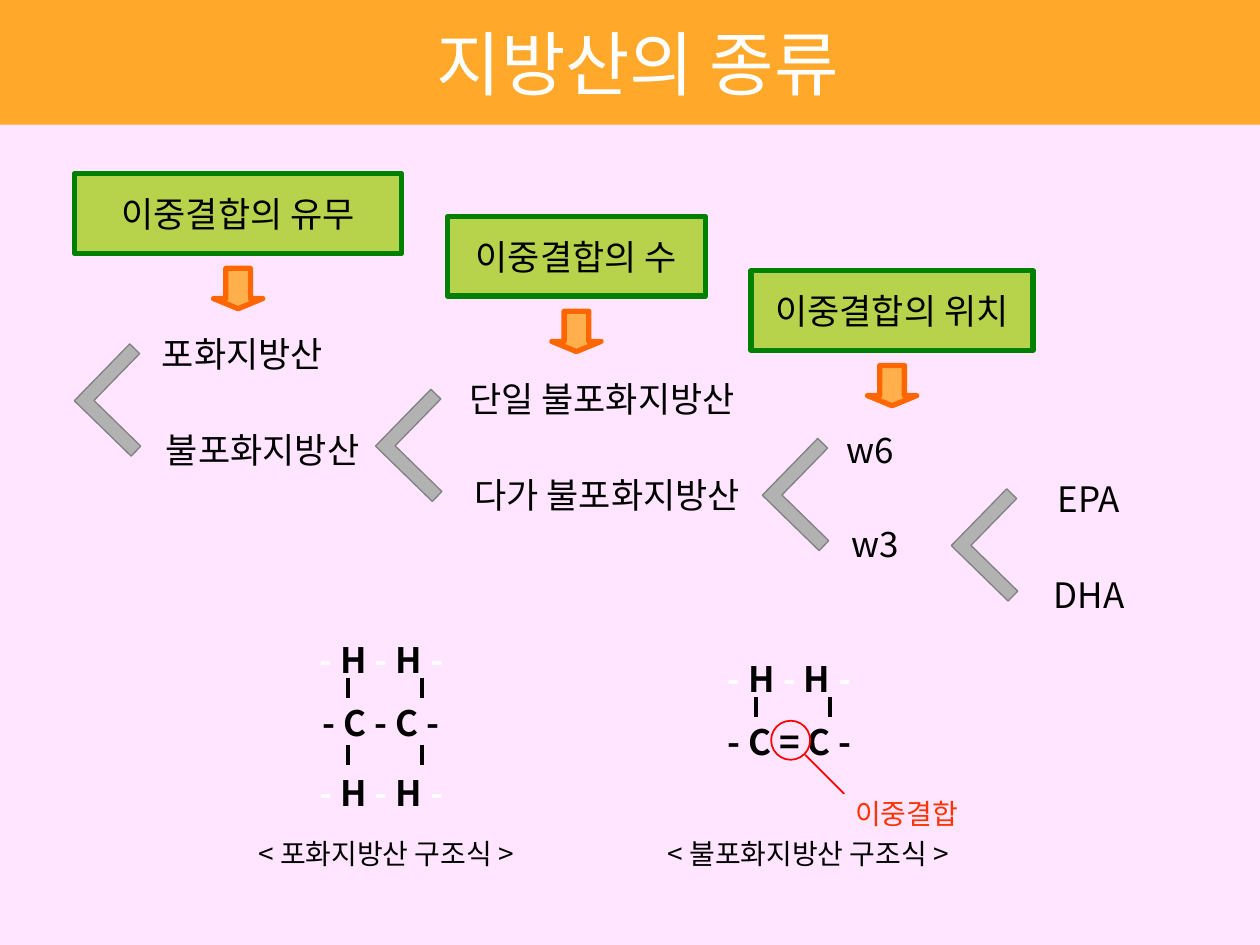
from dataclasses import dataclass

from lxml import etree
from pptx import Presentation
from pptx.dml.color import RGBColor
from pptx.enum.shapes import MSO_CONNECTOR, MSO_SHAPE
from pptx.enum.text import MSO_ANCHOR, MSO_AUTO_SIZE, PP_ALIGN
from pptx.oxml.ns import qn
from pptx.util import Inches, Pt

RECTANGLE = MSO_SHAPE.RECTANGLE
DOWN_ARROW = MSO_SHAPE.DOWN_ARROW
OVAL = MSO_SHAPE.OVAL
STRAIGHT = MSO_CONNECTOR.STRAIGHT
MIDDLE = MSO_ANCHOR.MIDDLE
CENTER = PP_ALIGN.CENTER
GROW = MSO_AUTO_SIZE.SHAPE_TO_FIT_TEXT
FIXED = MSO_AUTO_SIZE.NONE

FONT = "Noto Sans CJK KR"
COLORS = {
    "page": "FFE5FF", "banner": "FFA829", "white": "FFFFFF", "black": "000000",
    "bracket": "B2B2B2", "bracket_edge": "808080", "arrow": "FF9900",
    "arrow_edge": "FF6600", "box": "99CC00", "box_edge": "008000",
    "ring": "FF0000", "accent": "FF3300",
}
ARM, THICK = 0.63, 0.11
TEXT_HEIGHT, BOX_HEIGHT = 0.43, 0.63
ARROW_WIDTH, ARROW_HEIGHT, ARROW_DROP = 0.39, 0.32, 0.75
HYDROGENS = [(" ", "black"), ("- ", "white"), ("H ", "black"),
             ("-", "white"), (" H ", "black"), ("-", "white")]


@dataclass
class Label:
    text: str
    left: float
    top: float
    width: float


@dataclass
class Branch:
    left: float
    top: float
    labels: tuple[Label, Label]


@dataclass
class Molecule:
    left: float
    carbon_top: float
    carbons: str
    hydrogen_tops: tuple[float, ...]
    bond_tops: tuple[float, ...]
    caption: Label


BRANCHES = [
    Branch(0.72, 2.86, (Label("포화지방산", 0.9, 2.59, 2.05),
                        Label("불포화지방산", 1.06, 3.35, 2.05))),
    Branch(3.11, 3.22, (Label("단일 불포화지방산", 3.3, 2.95, 2.96),
                        Label("다가 불포화지방산", 3.3, 3.71, 3.04))),
    Branch(6.18, 3.61, (Label("w6", 6.37, 3.35, 1.07),
                        Label("w3", 6.53, 4.1, 0.83))),
    Branch(7.68, 4.01, (Label("EPA", 7.87, 3.74, 1.54),
                        Label("DHA", 8.03, 4.5, 1.23))),
]
CRITERIA = [
    Label("이중결합의 유무", 0.59, 1.38, 2.6),
    Label("이중결합의 수", 3.55, 1.72, 2.05),
    Label("이중결합의 위치", 5.96, 2.15, 2.24),
]
MOLECULES = [
    Molecule(1.93, 5.52, " - C - C -", (5.02, 6.07), (5.38, 5.91),
             Label("< 포화지방산 구조식 >", 1.53, 6.59, 3.07)),
    Molecule(5.17, 5.67, " - C = C -", (5.17,), (5.53,),
             Label("< 불포화지방산 구조식 >", 4.76, 6.59, 3.31)),
]


def rgb(name: str) -> RGBColor:
    return RGBColor.from_string(COLORS[name])


def write(shape, spans, size: float, bold: bool = False) -> None:
    para = shape.text_frame.paragraphs[0]
    para.alignment = CENTER
    for text, color in spans:
        span = para.add_run()
        span.text = text
        for key, value in {"name": FONT, "size": Pt(size), "bold": bold}.items():
            setattr(span.font, key, value)
        span.font.color.rgb = rgb(color)
        east_asian = etree.SubElement(span.font._element, qn("a:ea"))
        east_asian.set("typeface", FONT)


def add_text(page, label: Label, spans=None, size: float = 20, bold: bool = False,
             color: str = "black", height: float = TEXT_HEIGHT) -> None:
    box = page.shapes.add_textbox(Inches(label.left), Inches(label.top),
                                  Inches(label.width), Inches(height))
    for key, value in {"word_wrap": True, "auto_size": GROW}.items():
        setattr(box.text_frame, key, value)
    write(box, spans or [(label.text, color)], size, bold)


def paint(shape, fill: str | None, edge: str, width: float,
          opacity: int = 100) -> None:
    shape.shadow.inherit = False
    shape.line.color.rgb = rgb(edge)
    shape.line.width = Pt(width)
    if fill is None:
        shape.fill.background()
        return
    shape.fill.solid()
    shape.fill.fore_color.rgb = rgb(fill)
    if opacity < 100:
        tint = shape._element.spPr.find(qn("a:solidFill"))[0]
        etree.SubElement(tint, qn("a:alpha")).set("val", str(opacity * 1000))


def add_preset(page, kind, left: float, top: float, width: float, height: float):
    return page.shapes.add_shape(kind, Inches(left), Inches(top),
                                 Inches(width), Inches(height))


def add_line(page, start, end, color: str, width: float) -> None:
    line = page.shapes.add_connector(STRAIGHT, *map(Inches, start + end))
    line.line.color.rgb = rgb(color)
    line.line.width = Pt(width)
    etree.SubElement(line._element.spPr, qn("a:effectLst"))


def add_branch(page, branch: Branch) -> None:
    inner = ARM - THICK
    corners = [(0, ARM), (0, inner), (inner, inner), (inner, 0), (ARM, 0)]
    outline = page.shapes.build_freeform(Inches(ARM), Inches(ARM))
    outline.add_line_segments([(Inches(x), Inches(y)) for x, y in corners])
    bracket = outline.convert_to_shape(Inches(branch.left), Inches(branch.top))
    bracket.rotation = 134.3
    paint(bracket, "bracket", "bracket_edge", 0.75)
    for label in branch.labels:
        add_text(page, label)


def add_criterion(page, label: Label) -> None:
    arrow = add_preset(page, DOWN_ARROW,
                       label.left + (label.width - ARROW_WIDTH) / 2,
                       label.top + ARROW_DROP, ARROW_WIDTH, ARROW_HEIGHT)
    arrow.adjustments[0], arrow.adjustments[1] = 0.5, 0.25
    paint(arrow, "arrow", "arrow_edge", 3, 70)
    box = add_preset(page, RECTANGLE, label.left, label.top, label.width, BOX_HEIGHT)
    paint(box, "box", "box_edge", 3, 70)
    for key, value in {"word_wrap": False, "vertical_anchor": MIDDLE}.items():
        setattr(box.text_frame, key, value)
    write(box, [(label.text, "black")], 20)


def add_molecule(page, molecule: Molecule) -> None:
    carbon = Label(molecule.carbons, molecule.left, molecule.carbon_top, 2.13)
    add_text(page, carbon, bold=True)
    for top in molecule.hydrogen_tops:
        add_text(page, Label("", molecule.left, top, 2.13), HYDROGENS, bold=True)
    for top in molecule.bond_tops:
        for offset in (1.42, 0.83):
            x = molecule.left + offset
            add_line(page, (x, top), (x, top + 0.16), "black", 2.5)
    add_text(page, molecule.caption, size=16, height=0.37)


def add_title(page) -> None:
    title = page.shapes.title
    place = {"left": 0, "top": 0, "width": Inches(10), "height": Inches(0.99)}
    for key, value in place.items():
        setattr(title, key, value)
    title.fill.solid()
    title.fill.fore_color.rgb = rgb("banner")
    frame = {"word_wrap": False, "auto_size": FIXED, "vertical_anchor": MIDDLE}
    for key, value in frame.items():
        setattr(title.text_frame, key, value)
    write(title, [(" 지방산의 종류", "white")], 40)


def main() -> None:
    deck = Presentation()
    deck.slide_width, deck.slide_height = Inches(10), Inches(7.5)
    page = deck.slides.add_slide(deck.slide_layouts[5])
    page.background.fill.solid()
    page.background.fill.fore_color.rgb = rgb("page")
    add_title(page)
    for branch in BRANCHES:
        add_branch(page, branch)
    for criterion in CRITERIA:
        add_criterion(page, criterion)
    for molecule in MOLECULES:
        add_molecule(page, molecule)
    ring = add_preset(page, OVAL, 6.12, 5.72, 0.31, 0.31)
    paint(ring, None, "ring", 1)
    add_line(page, (6.39, 5.99), (6.7, 6.3), "ring", 1)
    add_text(page, Label("이중결합", 6.21, 6.27, 1.97), size=16,
             color="accent", height=0.37)
    deck.save("out.pptx")


if __name__ == "__main__":
    main()
